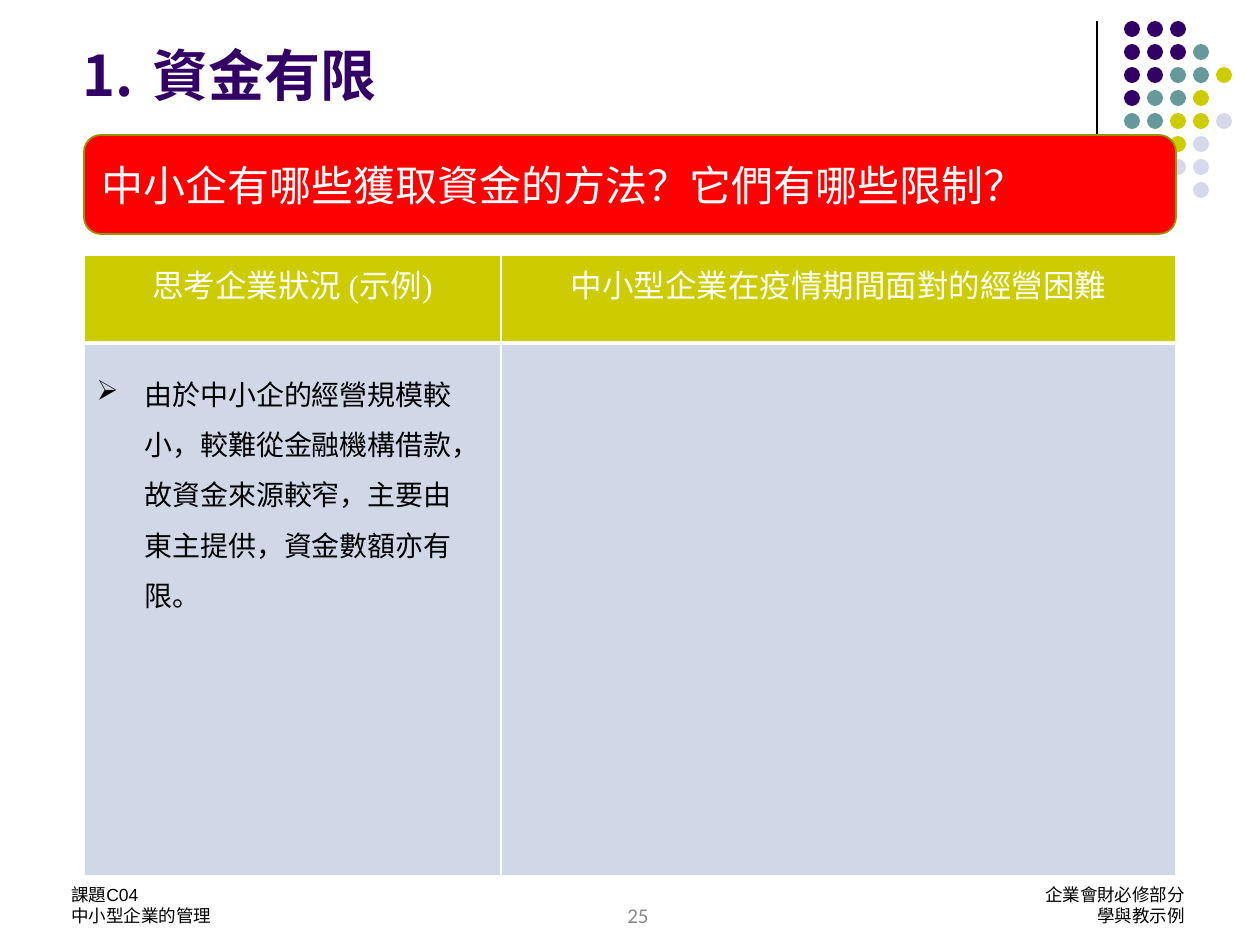
from lxml import etree
from pptx import Presentation
from pptx.dml.color import RGBColor
from pptx.enum.shapes import MSO_CONNECTOR, MSO_SHAPE
from pptx.enum.text import MSO_ANCHOR, MSO_AUTO_SIZE, PP_ALIGN
from pptx.oxml.ns import qn
from pptx.util import Pt

LEFT, CENTER, RIGHT = PP_ALIGN.LEFT, PP_ALIGN.CENTER, PP_ALIGN.RIGHT
TOP, MIDDLE, BOTTOM = MSO_ANCHOR.TOP, MSO_ANCHOR.MIDDLE, MSO_ANCHOR.BOTTOM
OVAL, ROUNDED = MSO_SHAPE.OVAL, MSO_SHAPE.ROUNDED_RECTANGLE
STRAIGHT = MSO_CONNECTOR.STRAIGHT
FIT_SHAPE, NO_FIT = MSO_AUTO_SIZE.SHAPE_TO_FIT_TEXT, MSO_AUTO_SIZE.NONE

PX = 914400 / 126
THEME = {
    "purple": "330066", "teal": "669999", "olive": "CCCC00", "lilac": "D8D8EC",
    "red": "FF0000", "banner_edge": "959500", "cell": "D0D8E8",
    "white": "FFFFFF", "black": "000000", "gray": "898989",
    "title": 32, "banner": 24, "header": 18, "body": 16, "number": 12, "footer": 10,
    "sans": "Arial", "serif": "Times New Roman", "digits": "Calibri",
}


def px(*lengths):
    return [round(length * PX) for length in lengths]


def style(para, face, size, color, align=LEFT, bold=False):
    para.alignment = align
    font = para.font
    font.name, font.size, font.bold = THEME[face], Pt(THEME[size]), bold
    font.color.rgb = RGBColor.from_string(THEME[color])


deck = Presentation()
deck.slide_width, deck.slide_height = px(1260, 945)
page = deck.slides.add_slide(deck.slide_layouts[1])
title, body = page.placeholders[0], page.placeholders[1]

# Rule and dot pattern in the top right corner
x, top, bottom = px(1097, 21, 231)
rule = page.shapes.add_connector(STRAIGHT, x, top, x, bottom)
rule.line.color.rgb = RGBColor.from_string(THEME["black"])
rule.line.width = Pt(0.75)
etree.SubElement(rule._element.spPr, qn("a:effectLst"))

DOT_COLORS = {"P": "purple", "T": "teal", "O": "olive", "L": "lilac"}
DOT_ROWS = ["PPP", "PPPT", "PPTTO", "PTTO", "TTOOL", "TOOL", "  LL", "   L"]
for row, codes in enumerate(DOT_ROWS):
    for col, code in enumerate(codes):
        if code in DOT_COLORS:
            dot = page.shapes.add_shape(
                OVAL, *px(1124 + 23 * col, 21 + 23 * row, 16, 16))
            dot.shadow.inherit = False
            dot.fill.solid()
            dot.fill.fore_color.rgb = RGBColor.from_string(THEME[DOT_COLORS[code]])
            dot.line.fill.background()

# Table with white borders and a thick line under the header
HEADERS = ["思考企業狀況 (示例)", "中小型企業在疫情期間面對的經營困難"]
table = page.shapes.add_table(2, 2, *px(84, 255, 1092, 621)).table
table.horz_banding = False
for column, width in zip(table.columns, px(417, 675)):
    column.width = width
for table_row, height in zip(table.rows, px(88, 533)):
    table_row.height = height
for row, (fill, thick_side) in enumerate([("olive", "lnB"), ("cell", "lnT")]):
    for col, header in enumerate(HEADERS):
        cell = table.cell(row, col)
        properties = cell._tc.get_or_add_tcPr()
        for side in ("lnL", "lnR", "lnT", "lnB"):
            width = Pt(3 if side == thick_side else 1)
            border = etree.SubElement(properties, qn("a:" + side), w=str(width))
            paint = etree.SubElement(border, qn("a:solidFill"))
            etree.SubElement(paint, qn("a:srgbClr"), val=THEME["white"])
        cell.fill.solid()
        cell.fill.fore_color.rgb = RGBColor.from_string(THEME[fill])
        if row == 0:
            cell.text = header
            style(cell.text_frame.paragraphs[0], "serif", "header", "white", CENTER)

# Numbered title and bulleted list
LISTS = [
    (title, "資金有限", (0, 0, 1197, 115), BOTTOM, NO_FIT, 0.9, (140, -70),
     "purple", "buAutoNum", {"type": "arabicPeriod"}, "title"),
    (body, "由於中小企的經營規模較小，較難從金融機構借款，故資金來源較窄，主要由東主提供，資金數額亦有限。",
     (84, 354, 407, 267), TOP, FIT_SHAPE, 1.5, (48, -48),
     "black", "buChar", {"char": "Ø"}, "body"),
]
for box, text, place, anchor, fit, spacing, indents, color, mark, kind, size in LISTS:
    box.left, box.top, box.width, box.height = px(*place)
    frame = box.text_frame
    frame.text = text
    frame.vertical_anchor, frame.auto_size = anchor, fit
    para = frame.paragraphs[0]
    properties = para._p.get_or_add_pPr()
    margin, indent = px(*indents)
    properties.set("marL", str(margin))
    properties.set("indent", str(indent))
    bullet_color = etree.SubElement(properties, qn("a:buClr"))
    etree.SubElement(bullet_color, qn("a:srgbClr"), val=THEME[color])
    bullet_face = "Wingdings" if mark == "buChar" else THEME["sans"]
    etree.SubElement(properties, qn("a:buFont"), typeface=bullet_face)
    etree.SubElement(properties, qn("a:" + mark), **kind)
    para.line_spacing, para.space_before = spacing, Pt(0)
    style(para, "sans", size, color, bold=box is title)
# The list lies on top of the table
page.shapes._spTree.append(body._element)

# Question banner
banner = page.shapes.add_shape(ROUNDED, *px(84, 135, 1092, 99))
banner.shadow.inherit = False
banner.adjustments[0] = 0.17
banner.fill.solid()
banner.fill.fore_color.rgb = RGBColor.from_string(THEME["red"])
banner.line.color.rgb = RGBColor.from_string(THEME["banner_edge"])
banner.line.width = Pt(1)
banner.text_frame.text = "中小企有哪些獲取資金的方法？它們有哪些限制？"
banner.text_frame.vertical_anchor = MIDDLE
style(banner.text_frame.paragraphs[0], "serif", "banner", "white")

# Page number and footers
FOOTERS = [
    (["25"], (491, 897, 294, 63), 6, "digits", "number", "gray", CENTER),
    (["企業會財必修部分", "學與教示例"], (730, 857, 467, 63), 27,
     "sans", "footer", "black", RIGHT),
    (["課題C04", "中小型企業的管理"], (59, 857, 294, 63), 27,
     "sans", "footer", "black", LEFT),
]
for lines, place, inset, face, size, color, align in FOOTERS:
    frame = page.shapes.add_textbox(*px(*place)).text_frame
    frame.word_wrap = True
    frame.margin_top = px(inset)[0]
    frame.text = "\n".join(lines)
    for para in frame.paragraphs:
        style(para, face, size, color, align)

deck.save("out.pptx")
